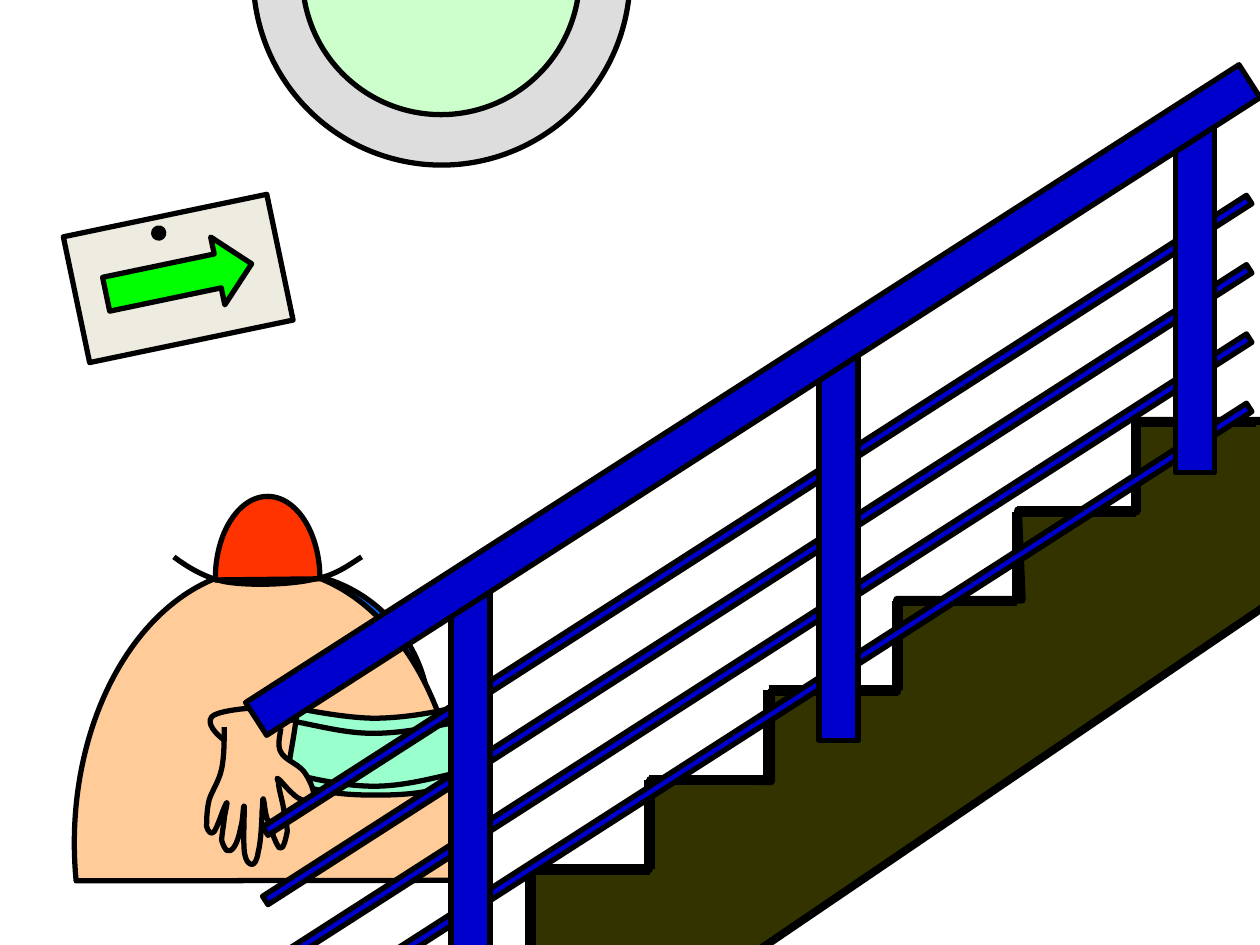
from lxml.etree import SubElement
from pptx import Presentation
from pptx.dml.color import RGBColor
from pptx.enum.shapes import MSO_CONNECTOR, MSO_SHAPE
from pptx.oxml.ns import qn
from pptx.util import Inches, Pt

COLORS = {
    "black": "000000", "stairs": "333300", "sign": "EEECE1", "arrow": "00FF00",
    "frame": "DDDDDD", "glass": "CCFFCC", "far_head": "0066FF", "skin": "FFCC99",
    "cap": "FF3300", "strap": "99FFCC", "railing": "0000CC",
}

prs = Presentation()
prs.slide_width, prs.slide_height = Inches(10), Inches(7.5)
shapes = prs.slides.add_slide(prs.slide_layouts[6]).shapes


def add_preset(kind, box, color, rotation=0, flipped=False, adjustments=()):
    shape = shapes.add_shape(kind, *[Inches(v) for v in box])
    shape.rotation = rotation
    for i, value in enumerate(adjustments):
        shape.adjustments[i] = value
    if flipped:
        shape._element.spPr.find(qn("a:xfrm")).set("flipH", "1")
    shape.shadow.inherit = False
    shape.fill.solid()
    shape.fill.fore_color.rgb = RGBColor.from_string(COLORS[color])
    shape.line.color.rgb = RGBColor.from_string(COLORS["black"])
    shape.line.width = Pt(3)


def add_outline(points, color=None, curved=True, closed=False, width=3):
    """Draw a polygon, or a Bezier outline: a start, then three points per curve."""
    emu = [(Inches(x), Inches(y)) for x, y in points]
    builder = shapes.build_freeform(*emu[0], scale=1.0)
    builder.add_line_segments(emu[1:], close=closed)
    shape = builder.convert_to_shape()
    if curved:
        outline = shape._element.spPr.find(".//" + qn("a:path"))
        segments = outline.findall(qn("a:lnTo"))
        for first in range(0, len(segments), 3):
            curve = SubElement(outline, qn("a:cubicBezTo"))
            for segment in segments[first:first + 3]:
                curve.append(segment[0])
                outline.remove(segment)
        for close in outline.findall(qn("a:close")):
            outline.append(close)
    shape.shadow.inherit = False
    if color:
        shape.fill.solid()
        shape.fill.fore_color.rgb = RGBColor.from_string(COLORS[color])
    else:
        shape.fill.background()
    shape.line.color.rgb = RGBColor.from_string(COLORS["black"])
    shape.line.width = Pt(width)


# Staircase
add_outline([
    (4.21, 7.59), (4.21, 6.91), (5.15, 6.9), (5.16, 6.19), (6.12, 6.2),
    (6.12, 5.49), (7.12, 5.49), (7.12, 4.76), (8.11, 4.76), (8.08, 4.05),
    (9.02, 4.06), (9.02, 3.34), (10.24, 3.34), (10.29, 4.64), (5.36, 7.99),
], "stairs", curved=False, closed=True, width=4.5)

# Step edges: the upper flight is set slightly to the right of the lower one
TREAD, RISE, FLIGHT_GAP = 0.95, 0.71, 0.08
edges = []
for step in range(6):
    x = 4.21 + step * 0.945 + (FLIGHT_GAP if step > 2 else 0)
    y = 6.9 - step * RISE
    edges += [(x, y + RISE, x, y), (x, y, x + TREAD, y)]
    if step == 2:
        edges.append((x + FLIGHT_GAP, y, x + FLIGHT_GAP + TREAD, y))
for edge in edges:
    edge_line = shapes.add_connector(MSO_CONNECTOR.STRAIGHT, *[Inches(v) for v in edge])
    edge_line.line.color.rgb = RGBColor.from_string(COLORS["black"])
    edge_line.line.width = Pt(6)
    SubElement(edge_line._element.spPr, qn("a:effectLst"))

# Tilted sign and round window
SIGN_TILT = 348.2
add_preset(MSO_SHAPE.RECTANGLE, (0.59, 1.7, 1.65, 1.02), "sign", SIGN_TILT)
add_preset(MSO_SHAPE.RIGHT_ARROW, (0.83, 1.94, 1.18, 0.55), "arrow", SIGN_TILT)
add_preset(MSO_SHAPE.OVAL, (1.22, 1.81, 0.08, 0.08), "black", SIGN_TILT)
add_preset(MSO_SHAPE.OVAL, (2.01, -1.68, 2.99, 2.99), "frame")
add_preset(MSO_SHAPE.OVAL, (2.4, -1.29, 2.2, 2.2), "glass")

# Figure behind, then the figure in front with its brim and cap
add_preset(MSO_SHAPE.OVAL, (1.07, 4.54, 2.34, 2.34), "far_head")
add_preset(MSO_SHAPE.CHORD, (0.59, 4.51, 3.07, 4.36), "skin",
           flipped=True, adjustments=(101.356, 6.744))
add_outline([(2.87, 4.42), (2.76, 4.49), (2.66, 4.57), (2.48, 4.6),
             (2.3, 4.64), (1.99, 4.65), (1.8, 4.62),
             (1.62, 4.59), (1.46, 4.48), (1.38, 4.42)])
add_preset(MSO_SHAPE.CHORD, (1.71, 3.94, 0.83, 1.3), "cap",
           flipped=True, adjustments=(107.651, 1.09))

# Mask with its two seams
add_outline([
    (3.58, 5.62), (3.64, 5.79), (3.63, 5.95), (3.66, 6.19),
    (3.44, 6.3), (3.2, 6.31), (2.97, 6.31), (2.74, 6.31), (2.51, 6.29), (2.28, 6.19),
    (2.29, 6.03), (2.34, 5.84), (2.36, 5.62), (2.44, 5.64), (2.77, 5.7), (2.97, 5.7),
    (3.18, 5.7), (3.43, 5.66), (3.58, 5.62),
], "strap", closed=True)
add_outline([(3.58, 5.74), (3.37, 5.78), (3.17, 5.82), (2.96, 5.82),
             (2.76, 5.82), (2.56, 5.77), (2.36, 5.73)])
add_outline([(3.64, 6.13), (3.42, 6.18), (3.2, 6.24), (2.97, 6.24),
             (2.75, 6.24), (2.51, 6.19), (2.28, 6.13)])

# Wrist and hand
add_outline([(2.27, 6.09), (2.09, 6.02), (1.9, 5.96), (1.8, 5.89),
             (1.7, 5.82), (1.64, 5.74), (1.68, 5.69),
             (1.71, 5.65), (1.92, 5.62), (2.03, 5.62),
             (2.14, 5.63), (2.24, 5.67), (2.33, 5.72)])
add_outline([
    (2.23, 5.78), (2.22, 5.85), (2.2, 5.92), (2.23, 5.97),
    (2.26, 6.03), (2.36, 6.06), (2.41, 6.12), (2.45, 6.17), (2.5, 6.28), (2.49, 6.32),
    (2.49, 6.36), (2.42, 6.37), (2.38, 6.34), (2.33, 6.32), (2.24, 6.21), (2.22, 6.19),
    (2.19, 6.17), (2.2, 6.17), (2.21, 6.21), (2.21, 6.25), (2.24, 6.35), (2.25, 6.41),
    (2.26, 6.48), (2.28, 6.55), (2.28, 6.6), (2.27, 6.65), (2.25, 6.75), (2.22, 6.73),
    (2.2, 6.72), (2.15, 6.59), (2.13, 6.52), (2.1, 6.46), (2.1, 6.36), (2.09, 6.34),
    (2.08, 6.33), (2.09, 6.37), (2.08, 6.44), (2.08, 6.51), (2.07, 6.69), (2.05, 6.76),
    (2.04, 6.83), (2.02, 6.86), (2, 6.86), (1.98, 6.86), (1.95, 6.84), (1.94, 6.76),
    (1.93, 6.69), (1.94, 6.44), (1.94, 6.4), (1.93, 6.37), (1.93, 6.52), (1.91, 6.57),
    (1.9, 6.63), (1.88, 6.69), (1.86, 6.72), (1.84, 6.75), (1.82, 6.76), (1.8, 6.75),
    (1.79, 6.74), (1.77, 6.71), (1.76, 6.67), (1.76, 6.62), (1.78, 6.53), (1.78, 6.49),
    (1.79, 6.44), (1.81, 6.35), (1.8, 6.37), (1.78, 6.39), (1.73, 6.56), (1.7, 6.6),
    (1.68, 6.63), (1.65, 6.6), (1.64, 6.56), (1.64, 6.52), (1.64, 6.43), (1.66, 6.35),
    (1.68, 6.28), (1.74, 6.2), (1.76, 6.1), (1.78, 6), (1.78, 5.88), (1.78, 5.77),
], "skin")

# Railing: four thin bars, three posts, handrail on top
SLOPE = 327.3
for bar in range(4):
    add_preset(MSO_SHAPE.RECTANGLE, (1.37, 4.05 + bar * 0.55, 9.28, 0.08), "railing", SLOPE)
for left, top, height in [(3.58, 4.69, 3.15), (6.5, 2.81, 3.07), (9.33, 0.92, 2.83)]:
    add_preset(MSO_SHAPE.RECTANGLE, (left, top, 0.31, height), "railing")
add_preset(MSO_SHAPE.RECTANGLE, (1.29, 3.02, 9.37, 0.31), "railing", SLOPE)

prs.save("out.pptx")
